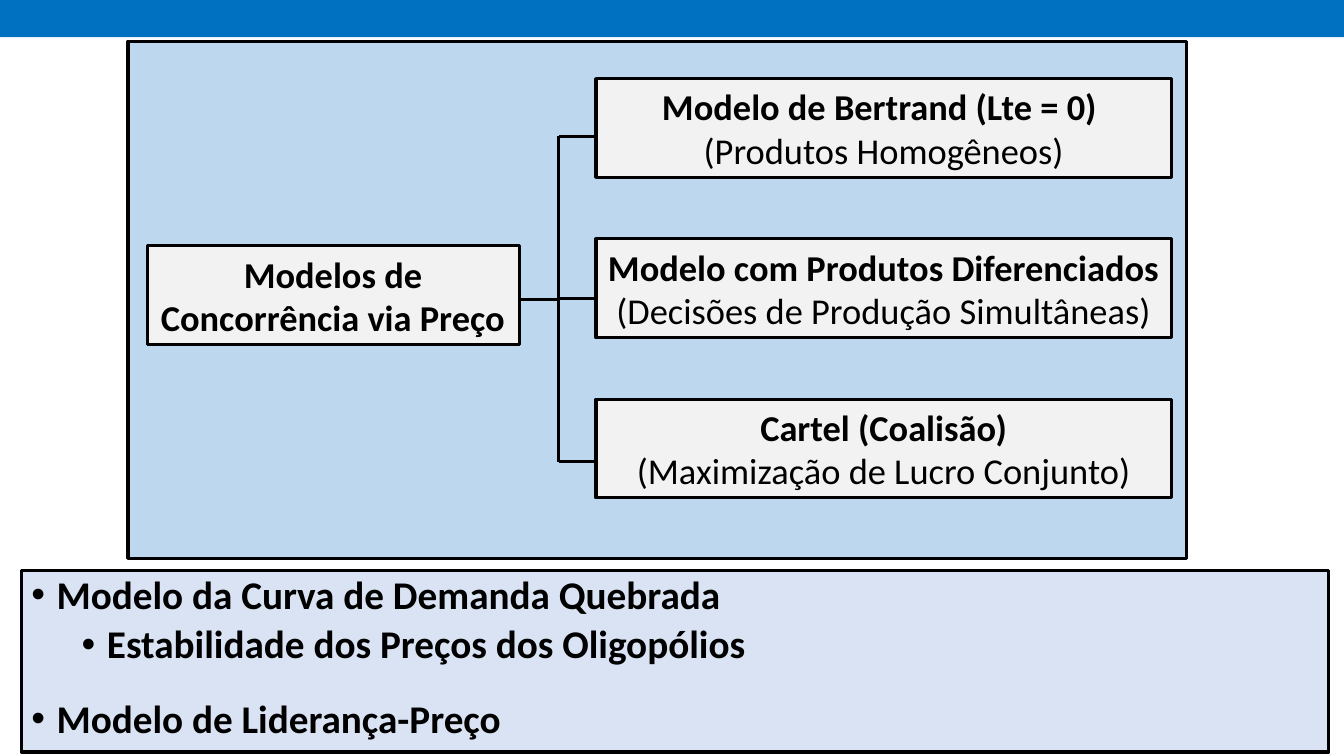
"""Builds the slide on price competition models in oligopoly."""
from lxml import etree
from pptx import Presentation
from pptx.dml.color import RGBColor
from pptx.enum.shapes import MSO_CONNECTOR, MSO_SHAPE
from pptx.enum.text import MSO_ANCHOR, MSO_AUTO_SIZE, PP_ALIGN
from pptx.oxml.ns import qn
from pptx.util import Inches, Pt

RECTANGLE = MSO_SHAPE.RECTANGLE
STRAIGHT = MSO_CONNECTOR.STRAIGHT
CENTER, LEFT = PP_ALIGN.CENTER, PP_ALIGN.LEFT
MIDDLE, TOP = MSO_ANCHOR.MIDDLE, MSO_ANCHOR.TOP
FIXED_SIZE = MSO_AUTO_SIZE.NONE

WIDTH, HEIGHT = Inches(13.33), Inches(7.5)
FONT = "Calibri"
COLORS = {"band": "0070C0", "panel": "BDD7EE", "box": "F2F2F2",
          "list": "DAE3F3", "ink": "000000"}

BOX_HEIGHT = 13.07
MODEL_LEFT, MODEL_WIDTH = 44.34, 42.84
MODEL_TOP, MODEL_STEP = 10.4, 21.2
ROOT_LEFT, ROOT_TOP, ROOT_WIDTH = 10.95, 32.53, 27.68
TRUNK_X, BRANCH_END = 41.56, 44.5
BRANCH_ROWS = (18, 39.47, 61.07)
ROOT_ROW = 39.6

ROOT = [("Modelos de Concorrência via Preço", True)]
MODELS = [
    [("Modelo de Bertrand (Lte = 0) ", True), ("(Produtos Homogêneos)", False)],
    [("Modelo com Produtos Diferenciados", True),
     ("(Decisões de Produção Simultâneas)", False)],
    [("Cartel (Coalisão)", True), ("(Maximização de Lucro Conjunto)", False)],
]
OTHER_MODELS = [
    ("Modelo da Curva de Demanda Quebrada", 0, 0),
    ("Estabilidade dos Preços dos Oligopólios", 1, 5),
    ("Modelo de Liderança-Preço", 0, 23),
]


def color(name):
    """Return the named colour of the palette."""
    return RGBColor.from_string(COLORS[name])


def place(left, top, width, height):
    """Turn percentages of the slide into a position and a size."""
    return (int(WIDTH * left / 100), int(HEIGHT * top / 100),
            int(WIDTH * width / 100), int(HEIGHT * height / 100))


def paint(shape, fill, outlined=True):
    """Fill a shape and give it a dark outline if wanted."""
    shape.fill.solid()
    shape.fill.fore_color.rgb = color(fill)
    if outlined:
        shape.line.color.rgb = color("ink")
        shape.line.width = Pt(2.25)
    else:
        shape.line.fill.background()


def add_run(paragraph, text, size, bold):
    """Append one formatted run to a paragraph."""
    run = paragraph.add_run()
    run.text = text
    run.font.name = FONT
    run.font.size = Pt(size)
    run.font.bold = bold
    run.font.color.rgb = color("ink")


def next_paragraph(frame, index):
    """Return the first paragraph of a frame, or a new one after it."""
    return frame.add_paragraph() if index else frame.paragraphs[0]


def add_block(slide, bounds, fill, lines=(), outlined=True):
    """Add a rectangle holding centred lines of text."""
    block = slide.shapes.add_shape(RECTANGLE, *place(*bounds))
    block.shadow.inherit = False
    paint(block, fill, outlined)
    frame = block.text_frame
    frame.word_wrap = True
    frame.vertical_anchor = MIDDLE
    for index, (text, bold) in enumerate(lines):
        paragraph = next_paragraph(frame, index)
        paragraph.alignment = CENTER
        add_run(paragraph, text, 26, bold)


def add_link(slide, start_x, start_y, end_x, end_y):
    """Draw a straight line of the tree."""
    x1, y1, x2, y2 = place(start_x, start_y, end_x, end_y)
    link = slide.shapes.add_connector(STRAIGHT, x1, y1, x2, y2)
    link.line.color.rgb = color("ink")
    link.line.width = Pt(2.25)
    etree.SubElement(link._element.spPr, qn("a:effectLst"))


def add_tree(slide):
    """Draw the root, its models and the bracket between them."""
    add_block(slide, (9.53, 5.47, 78.77, 68.4), "panel")
    for row, model in enumerate(MODELS):
        top = MODEL_TOP + row * MODEL_STEP
        add_block(slide, (MODEL_LEFT, top, MODEL_WIDTH, BOX_HEIGHT), "box", model)
    add_block(slide, (ROOT_LEFT, ROOT_TOP, ROOT_WIDTH, BOX_HEIGHT), "box", ROOT)
    add_link(slide, TRUNK_X, BRANCH_ROWS[0], TRUNK_X, BRANCH_ROWS[-1])
    add_link(slide, ROOT_LEFT + ROOT_WIDTH, ROOT_ROW, TRUNK_X, ROOT_ROW)
    for branch_row in BRANCH_ROWS:
        add_link(slide, TRUNK_X, branch_row, BRANCH_END, branch_row)


def add_bullet(paragraph, level):
    """Give a paragraph a round bullet with a hanging indent."""
    properties = paragraph._p.get_or_add_pPr()
    properties.set("marL", str(Inches(0.25 + 0.5 * level)))
    properties.set("indent", str(Inches(-0.25)))
    etree.SubElement(properties, qn("a:buFont"), typeface="Arial")
    etree.SubElement(properties, qn("a:buChar"), char="•")


def fill_list(body):
    """Turn the body placeholder into the framed list of other models."""
    body.left, body.top, body.width, body.height = place(1.58, 75.47, 97.3, 24)
    paint(body, "list")
    frame = body.text_frame
    frame.word_wrap = True
    frame.auto_size = FIXED_SIZE
    frame.vertical_anchor = TOP
    for index, (text, level, space) in enumerate(OTHER_MODELS):
        paragraph = next_paragraph(frame, index)
        add_bullet(paragraph, level)
        paragraph.level = level
        paragraph.alignment = LEFT
        paragraph.line_spacing = 0.9
        paragraph.space_before = Pt(space)
        add_run(paragraph, text, 28, True)


def main():
    """Build and save the slide."""
    deck = Presentation()
    deck.slide_width, deck.slide_height = WIDTH, HEIGHT
    slide = deck.slides.add_slide(deck.slide_layouts[1])
    title, body = slide.placeholders
    title._element.getparent().remove(title._element)
    add_block(slide, (0, 0, 100, 4.93), "band", outlined=False)
    add_tree(slide)
    fill_list(body)
    deck.save("out.pptx")


if __name__ == "__main__":
    main()
